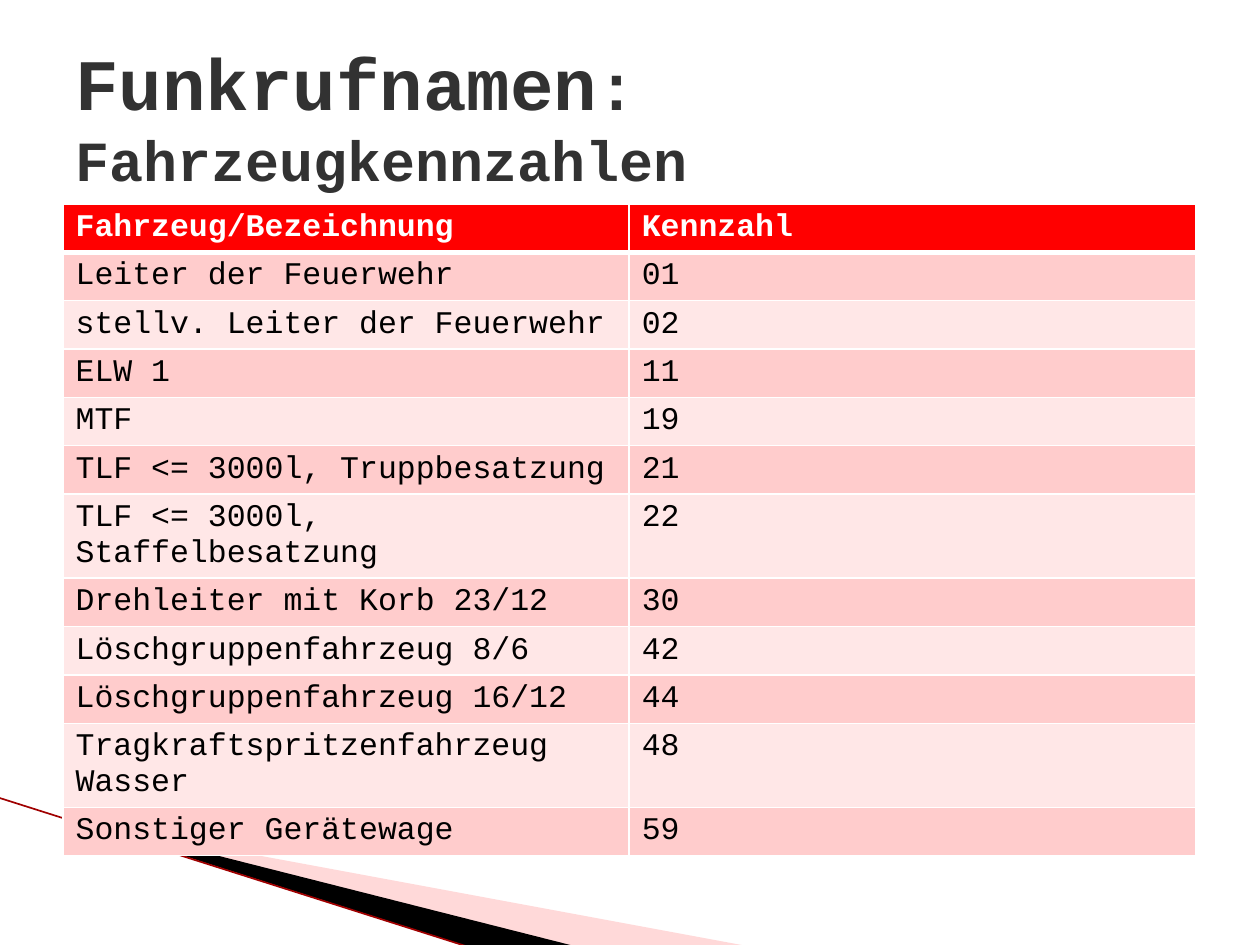
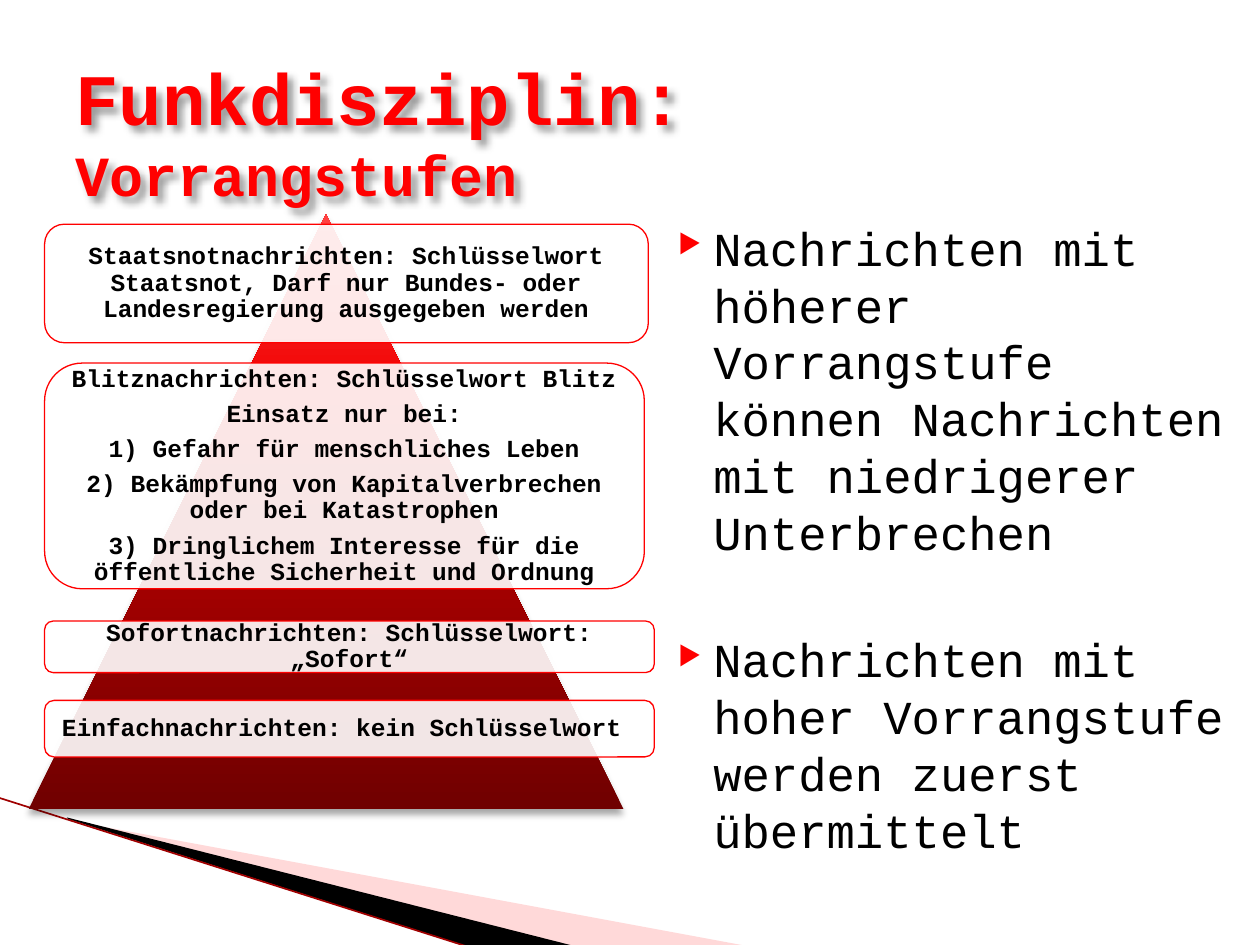
from pptx import Presentation
from pptx.dml.color import RGBColor
from pptx.enum.shapes import MSO_CONNECTOR as Connector, MSO_SHAPE as Shape
from pptx.enum.text import MSO_ANCHOR as Anchor, PP_ALIGN as Align
from pptx.oxml import parse_xml
from pptx.oxml.ns import nsdecls, qn
from pptx.util import Cm, Pt

# Shared style
FONT = "Courier New"
RED, BLACK, WHITE, GREY = "FF0000", "000000", "FFFFFF", "323232"
ROW_FILLS = ("FFE7E7", "FFCCCC")
TITLE_SIZE, SUBTITLE_SIZE = 41.4, 32.4

# Decoration in the lower left corner, points in cm
PINK_WEDGE = [(1.4, 16.54), (15.11, 19.08), (11.58, 19.08), (1.4, 16.51)]
BLACK_WEDGE = [(1.35, 16.48), (11.61, 19.08), (9.5, 19.1), (1.37, 16.51)]
EDGE_LINE = (-0.03, 16.08, 9.48, 19.1)

VEHICLES = [
    ("Fahrzeug/Bezeichnung", "Kennzahl"),
    ("Leiter der Feuerwehr", "01"),
    ("stellv. Leiter der Feuerwehr", "02"),
    ("ELW 1", "11"),
    ("MTF", "19"),
    ("TLF <= 3000l, Truppbesatzung", "21"),
    ("TLF <= 3000l, Staffelbesatzung", "22"),
    ("Drehleiter mit Korb 23/12", "30"),
    ("Löschgruppenfahrzeug 8/6", "42"),
    ("Löschgruppenfahrzeug 16/12", "44"),
    ("Tragkraftspritzenfahrzeug Wasser", "48"),
    ("Sonstiger Gerätewage", "59"),
]

# Priority levels: top, width, height in cm, then the paragraphs
LEVELS = [
    (4.52, 12.17, 2.39, [
        "Staatsnotnachrichten: Schlüsselwort Staatsnot, "
        "Darf nur Bundes- oder Landesregierung ausgegeben werden"]),
    (7.32, 12.09, 4.55, [
        "Blitznachrichten: Schlüsselwort Blitz",
        "Einsatz nur bei:",
        "1) Gefahr für menschliches Leben",
        "2) Bekämpfung von Kapitalverbrechen oder bei Katastrophen",
        "3) Dringlichem Interesse für die öffentliche Sicherheit und Ordnung"]),
    (12.52, 12.29, 1.04, ["Sofortnachrichten: Schlüsselwort: „Sofort“"]),
    (14.12, 12.29, 1.14, ["Einfachnachrichten: kein Schlüsselwort "]),
]

RULES = [
    "Nachrichten mit höherer Vorrangstufe können Nachrichten "
    "mit niedrigerer Unterbrechen",
    "Nachrichten mit hoher Vorrangstufe werden zuerst übermittelt",
]


def color(value):
    return RGBColor.from_string(value)


def add_run(para, text, size, ink=BLACK, bold=False):
    span = para.add_run()
    span.text = text
    font = span.font
    font.name, font.size, font.bold = FONT, Pt(size), bold
    font.color.rgb = color(ink)


def paint(shape, fill, opacity=100):
    shape.shadow.inherit = False
    shape.fill.solid()
    shape.fill.fore_color.rgb = color(fill)
    shape.line.fill.background()
    if opacity < 100:
        tint = shape._element.spPr.find(qn("a:solidFill"))[0]
        tint.append(parse_xml(
            f'<a:alpha {nsdecls("a")} val="{opacity * 1000}"/>'))


def add_shadow(shape, opacity, blur, distance, angle):
    shape.shadow.inherit = False
    effects = shape._element.spPr.find(qn("a:effectLst"))
    effects.append(parse_xml(
        f'<a:outerShdw {nsdecls("a")} blurRad="{Pt(blur)}" dist="{Pt(distance)}" '
        f'dir="{angle * 60000}" algn="ctr" rotWithShape="0">'
        f'<a:srgbClr val="{BLACK}"><a:alpha val="{opacity * 1000}"/></a:srgbClr>'
        '</a:outerShdw>'))


def add_wedge(page, points, fill, opacity=100):
    corners = [(Cm(x), Cm(y)) for x, y in points]
    builder = page.shapes.build_freeform(*corners[0], scale=1.0)
    builder.add_line_segments(corners[1:], close=True)
    paint(builder.convert_to_shape(), fill, opacity)


def add_page(deck):
    page = deck.slides.add_slide(deck.slide_layouts[6])
    add_wedge(page, PINK_WEDGE, "FFA2A2", 40)
    add_wedge(page, BLACK_WEDGE, BLACK)
    edge = page.shapes.add_connector(
        Connector.STRAIGHT, *[Cm(value) for value in EDGE_LINE])
    edge.line.color.rgb = color("A00000")
    edge.line.width = Pt(0.95)
    edge._element.spPr.append(parse_xml(f'<a:effectLst {nsdecls("a")}/>'))
    return page


def add_text_box(page, left, top, width, height, anchor):
    box = page.shapes.add_textbox(Cm(left), Cm(top), Cm(width), Cm(height))
    frame = box.text_frame
    frame.word_wrap = True
    frame.vertical_anchor = anchor
    return box


def add_title(page, top, height, heading, subtitle, ink):
    """heading is a list of (text, size) ahead of the line break."""
    box = add_text_box(page, 1.27, top, 22.86, height, Anchor.MIDDLE)
    para = box.text_frame.paragraphs[0]
    for text, size in heading:
        add_run(para, text, size, ink, True)
    para.add_line_break()
    add_run(para, subtitle, SUBTITLE_SIZE, ink, True)
    return box


def add_borders(cell, widths):
    props = cell._tc.get_or_add_tcPr()
    for side, width in zip("LRTB", widths):
        props.append(parse_xml(
            f'<a:ln{side} {nsdecls("a")} w="{Pt(width)}"><a:solidFill>'
            f'<a:srgbClr val="{WHITE}"/></a:solidFill></a:ln{side}>'))


def add_vehicle_table(page):
    count = len(VEHICLES)
    table = page.shapes.add_table(
        count, 2, Cm(1.27), Cm(4.11), Cm(22.83), Cm(0.61 * count)).table
    table.horz_banding = False
    for r, entry in enumerate(VEHICLES):
        header = r == 0
        for c, text in enumerate(entry):
            cell = table.cell(r, c)
            add_borders(cell, (1, 1, 3 if r == 1 else 1, 3 if header else 1))
            cell.fill.solid()
            cell.fill.fore_color.rgb = color(RED if header else ROW_FILLS[r % 2])
            add_run(cell.text_frame.paragraphs[0], text, 18,
                    WHITE if header else BLACK, header)


def add_pyramid(page):
    pyramid = page.shapes.add_shape(
        Shape.ISOSCELES_TRIANGLE, Cm(0.58), Cm(4.32), Cm(11.99), Cm(11.99))
    pyramid.line.fill.background()
    pyramid.fill.gradient()
    pyramid.fill.gradient_angle = 90
    stops = pyramid._element.spPr.find(qn("a:gradFill")).find(qn("a:gsLst"))
    for stop in list(stops):
        stops.remove(stop)
    for place, tone in ((0, "700000"), (50, "B40000"), (70, "F00000"), (100, "FF4242")):
        stops.append(parse_xml(
            f'<a:gs {nsdecls("a")} pos="{place * 1000}"><a:srgbClr val="{tone}"/></a:gs>'))
    add_shadow(pyramid, 35, 4, 3, 90)


def add_level(page, top, width, height, lines):
    box = page.shapes.add_shape(
        Shape.ROUNDED_RECTANGLE, Cm(0.9), Cm(top), Cm(width), Cm(height))
    paint(box, WHITE, 90)
    box.line.color.rgb = color(RED)
    box.line.width = Pt(0.75)
    frame = box.text_frame
    frame.word_wrap = True
    frame.vertical_anchor = Anchor.MIDDLE
    frame.margin_left = frame.margin_right = Cm(0.15)
    frame.margin_top = frame.margin_bottom = Cm(0.15)
    for i, text in enumerate(lines):
        para = frame.add_paragraph() if i else frame.paragraphs[0]
        para.alignment = Align.CENTER
        para.line_spacing = 0.9
        if i:
            para.space_before = Pt(4.9)
        add_run(para, text, 14, bold=True)


def add_bullets(page, items):
    box = add_text_box(page, 13.11, 4.32, 11.99, 12.37, Anchor.TOP)
    frame = box.text_frame
    frame.margin_top = Cm(0.1)
    for i, text in enumerate(items):
        para = frame.add_paragraph() if i else frame.paragraphs[0]
        if i:
            para.space_before = Pt(40.5)
        props = para._p.get_or_add_pPr()
        props.set("marL", str(Cm(1.02)))
        props.set("indent", str(Cm(-0.71)))
        for mark in (f'<a:buClr {nsdecls("a")}><a:srgbClr val="{RED}"/></a:buClr>',
                     f'<a:buSzPct {nsdecls("a")} val="56000"/>',
                     f'<a:buChar {nsdecls("a")} char="▶"/>'):
            props.append(parse_xml(mark))
        add_run(para, text, 27)


def main():
    deck = Presentation()
    deck.slide_width, deck.slide_height = Cm(25.4), Cm(19.05)

    # Vehicle numbers
    page = add_page(deck)
    add_vehicle_table(page)
    add_title(page, 0.76, 3.15, [("Funkrufnamen", TITLE_SIZE), (": ", 36.9)],
              "Fahrzeugkennzahlen", GREY)

    # Priority levels
    page = add_page(deck)
    add_pyramid(page)
    for level in LEVELS:
        add_level(page, *level)
    title = add_title(page, 1.32, 2.62, [("Funkdisziplin:", TITLE_SIZE)],
                      "Vorrangstufen", RED)
    add_shadow(title, 40, 4, 4, 45)
    add_bullets(page, RULES)

    deck.save("out.pptx")


if __name__ == "__main__":
    main()
